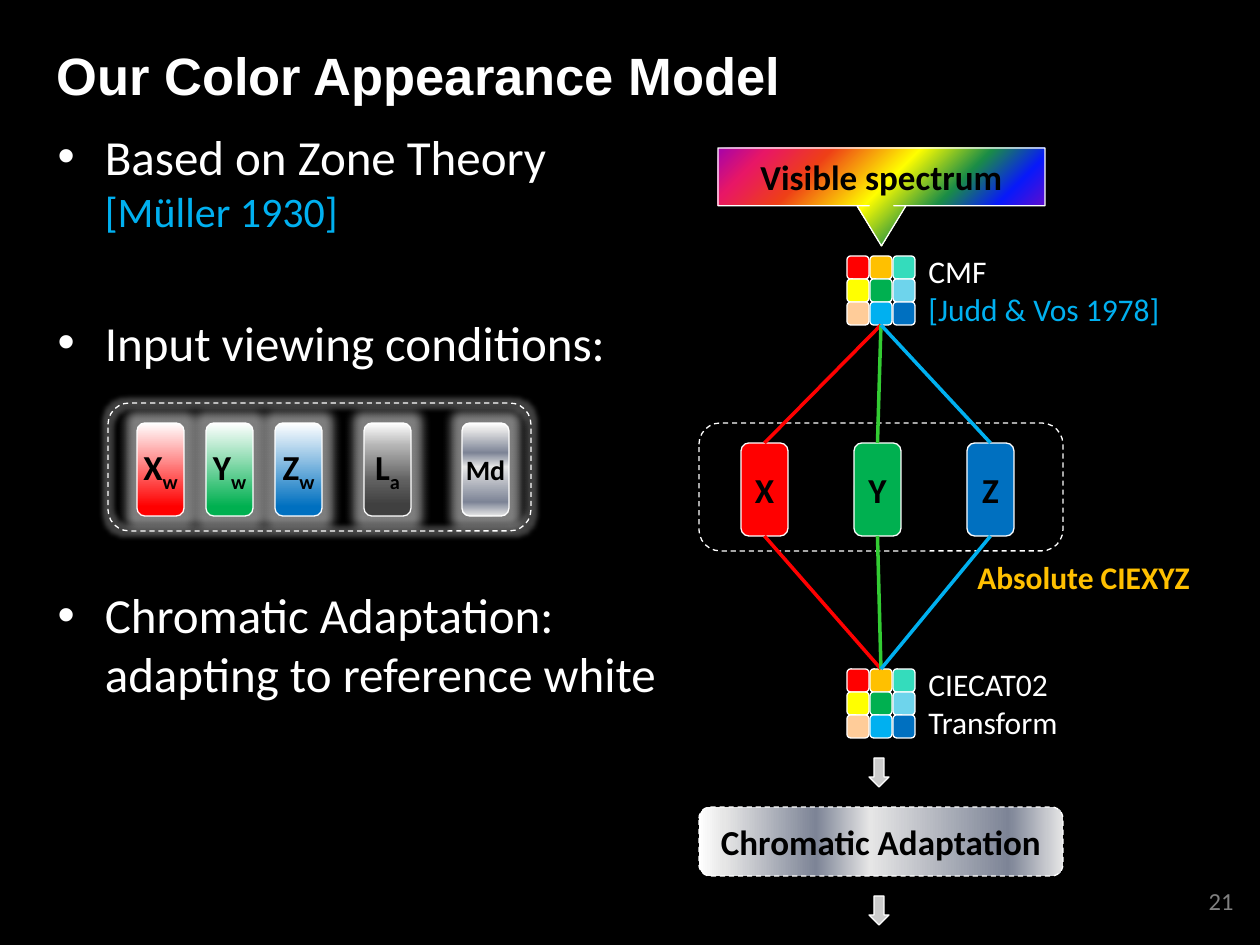
from pptx import Presentation
from pptx.dml.color import RGBColor
from pptx.enum.dml import MSO_LINE
from pptx.enum.shapes import MSO_CONNECTOR, MSO_SHAPE
from pptx.enum.text import MSO_ANCHOR as ANCHOR, MSO_AUTO_SIZE, PP_ALIGN as ALIGN
from pptx.oxml import parse_xml
from pptx.oxml.ns import nsdecls, qn
from pptx.util import Pt

BLACK = RGBColor(0x00, 0x00, 0x00)
WHITE = RGBColor(0xFF, 0xFF, 0xFF)
GRAY = RGBColor(0x80, 0x80, 0x80)
SILVER = RGBColor(0xCC, 0xCC, 0xCC)
RED = RGBColor(0xFF, 0x00, 0x00)
GOLD = RGBColor(0xFF, 0xC0, 0x00)
TEAL = RGBColor(0x34, 0xDC, 0xBC)
YELLOW = RGBColor(0xFF, 0xFF, 0x00)
GREEN = RGBColor(0x00, 0xB0, 0x50)
LIME = RGBColor(0x33, 0xCC, 0x33)
PALE_BLUE = RGBColor(0x6E, 0xD4, 0xEC)
PEACH = RGBColor(0xFF, 0xCC, 0x99)
SKY = RGBColor(0x00, 0xB0, 0xF0)
BLUE = RGBColor(0x00, 0x70, 0xC0)
STEEL = RGBColor(0x7D, 0x84, 0x96)
MIST = RGBColor(0xE6, 0xE6, 0xE6)
ASH = RGBColor(0xB3, 0xB3, 0xB3)
SLATE = RGBColor(0x60, 0x60, 0x60)
CHARCOAL = RGBColor(0x40, 0x40, 0x40)
PURPLE = RGBColor(0xA6, 0x03, 0xAB)
ULTRAMARINE = RGBColor(0x08, 0x19, 0xFB)
FOREST = RGBColor(0x1A, 0x8D, 0x48)
ORANGE = RGBColor(0xEE, 0x3F, 0x17)
MAGENTA = RGBColor(0xE8, 0x17, 0x66)

MATRIX = [[RED, GOLD, TEAL], [YELLOW, GREEN, PALE_BLUE], [PEACH, SKY, BLUE]]
METAL = [(0, WHITE), (7, MIST), (32, STEEL), (47, MIST), (85, STEEL), (100, MIST)]
DARK = [(0, WHITE), (25, ASH), (62, SLATE), (88, CHARCOAL)]
SPECTRUM = [(0, PURPLE), (21, ULTRAMARINE), (35, FOREST), (52, YELLOW),
            (73, ORANGE), (88, MAGENTA), (100, PURPLE)]
DOWNWARD = '<a:lin ang="5400000" scaled="0"/>'
RIGHTWARD = '<a:lin ang="0" scaled="0"/>'
RADIAL = '<a:path path="circle"><a:fillToRect l="100000" t="100000"/></a:path>'


def px(length):
    """Turn px into EMU."""
    return round(length * 914400 / 126)


class SlideBuilder:
    """Hold the style and the current slide."""

    font = "Calibri"

    def __init__(self, presentation):
        self.slide = presentation.slides.add_slide(presentation.slide_layouts[1])
        self.slide.background.fill.solid()
        self.slide.background.fill.fore_color.rgb = BLACK

    def style(self, runs, size, color, bold=False, font=None):
        """Format runs of text."""
        for run in runs:
            run.font.name = font or self.font
            run.font.size = Pt(size)
            run.font.bold = bold
            run.font.color.rgb = color

    def place(self, shape, x, y, width, height):
        """Move and size a shape."""
        shape.left, shape.top, shape.width, shape.height = map(px, (x, y, width, height))

    def title(self, text, *box):
        """Fill the title placeholder."""
        shape = self.slide.shapes.title
        self.place(shape, *box)
        frame = shape.text_frame
        frame.text = text
        frame.auto_size = MSO_AUTO_SIZE.NONE
        frame.vertical_anchor = ANCHOR.TOP
        frame.margin_top = px(11)
        frame.paragraphs[0].alignment = ALIGN.LEFT
        self.style(frame.paragraphs[0].runs, 30, WHITE, True, "Arial")

    def bullets(self, items, *box):
        """Fill the body placeholder with (text, space before) items."""
        shape = self.slide.placeholders[1]
        self.place(shape, *box)
        frame = shape.text_frame
        frame.text = "\n".join(text for text, _ in items)
        frame.auto_size = MSO_AUTO_SIZE.NONE
        for paragraph, (_, space) in zip(frame.paragraphs, items):
            paragraph.space_before = Pt(space)
            self.style(paragraph.runs, 28, WHITE)
        self.style(frame.paragraphs[0].runs[1:], 24, SKY)

    def label(self, text, *box, size=18, colors=(WHITE,), bold=False, align=ALIGN.LEFT):
        """Add a text box with one color per paragraph."""
        frame = self.slide.shapes.add_textbox(*map(px, box)).text_frame
        frame.text = text
        frame.word_wrap = True
        for paragraph, color in zip(frame.paragraphs, colors):
            paragraph.alignment = align
            self.style(paragraph.runs, size, color, bold)

    def shape(self, kind, *box, fill=None, dashed=False):
        """Add a preset shape with a thin white outline."""
        shape = self.slide.shapes.add_shape(kind, *map(px, box))
        shape.shadow.inherit = False
        shape.line.color.rgb = WHITE
        shape.line.width = Pt(0.75)
        if dashed:
            shape.line.dash_style = MSO_LINE.DASH
        if fill is None:
            shape.fill.background()
        else:
            shape.fill.solid()
            shape.fill.fore_color.rgb = fill
        return shape

    def gradient(self, shape, stops, direction):
        """Replace an empty fill by a gradient."""
        marks = "".join(f'<a:gs pos="{position * 1000}"><a:srgbClr val="{color}"/></a:gs>'
                        for position, color in stops)
        properties = shape._element.spPr
        properties.replace(properties.find(qn("a:noFill")), parse_xml(
            f'<a:gradFill {nsdecls("a")} rotWithShape="1"><a:gsLst>{marks}</a:gsLst>'
            f'{direction}</a:gradFill>'))

    def glow(self, shape, radius, opacity):
        """Add a white glow."""
        shape._element.spPr.find(qn("a:effectLst")).append(parse_xml(
            f'<a:glow {nsdecls("a")} rad="{px(radius)}"><a:srgbClr val="FFFFFF">'
            f'<a:alpha val="{opacity * 1000}"/></a:srgbClr></a:glow>'))

    def caption(self, shape, text, subscript="", size=20, margin=0):
        """Write bold centred text in a shape."""
        frame = shape.text_frame
        frame.text = text
        frame.margin_left = frame.margin_right = px(margin)
        frame.vertical_anchor = ANCHOR.MIDDLE
        paragraph = frame.paragraphs[0]
        paragraph.alignment = ALIGN.CENTER
        if subscript:
            run = paragraph.add_run()
            run.text = subscript
            run._r.get_or_add_rPr().set("baseline", "-25000")
        self.style(paragraph.runs, size, BLACK, True)

    def matrix(self, x, y):
        """Add a grid of colored cells and return its rows."""
        return [[self.shape(MSO_SHAPE.ROUNDED_RECTANGLE, x + 23 * column, y + 23 * row,
                            22, 23, fill=color)
                 for column, color in enumerate(colors)]
                for row, colors in enumerate(MATRIX)]

    def connect(self, upper, lower, color):
        """Join the bottom of one shape to the top of another."""
        line = self.slide.shapes.add_connector(MSO_CONNECTOR.STRAIGHT, 0, 0, 0, 0)
        line.begin_connect(upper, 2)
        line.end_connect(lower, 0)
        line.line.color.rgb = color
        line.line.width = Pt(2)
        line._element.spPr.append(parse_xml(f'<a:effectLst {nsdecls("a")}/>'))


def main():
    """Build the slide."""
    presentation = Presentation()
    presentation.slide_width, presentation.slide_height = px(1260), px(945)
    builder = SlideBuilder(presentation)
    rounded = MSO_SHAPE.ROUNDED_RECTANGLE

    builder.title("Our Color Appearance Model", 44, 32, 1021, 69)
    builder.bullets([("Based on Zone Theory\v[Müller 1930]", 0),
                     ("Input viewing conditions:", 44),
                     ("Chromatic Adaptation:\vadapting to reference white", 122)],
                    45, 120, 654, 804)
    builder.label("21", 1182, 880, 64, 65, size=14, colors=[GRAY], align=ALIGN.RIGHT)

    spectrum = builder.shape(MSO_SHAPE.DOWN_ARROW_CALLOUT, 718, 148, 327, 98)
    for index, value in enumerate((0.25, 0.25, 0.41, 0.65)):
        spectrum.adjustments[index] = value
    builder.gradient(spectrum, SPECTRUM, RADIAL)
    builder.caption(spectrum, "Visible spectrum", margin=12)

    builder.shape(rounded, 699, 423, 364, 128, dashed=True)
    channels = []
    for index, (name, color) in enumerate((("X", RED), ("Y", GREEN), ("Z", BLUE))):
        channel = builder.shape(rounded, 741 + 113 * index, 443, 47, 93, fill=color)
        builder.caption(channel, name)
        channels.append(channel)
    builder.label("Absolute CIEXYZ", 965, 552, 276, 50, colors=[GOLD], bold=True)

    matching = builder.matrix(847, 256)
    builder.label("CMF\n[Judd & Vos 1978]", 916, 246, 260, 89, colors=[WHITE, SKY])
    transform = builder.matrix(847, 669)
    builder.label("CIECAT02\vTransform", 916, 659, 156, 89)

    adaptation = builder.shape(rounded, 699, 807, 364, 69, dashed=True)
    builder.gradient(adaptation, METAL, RIGHTWARD)
    builder.caption(adaptation, "Chromatic Adaptation", margin=12)
    for top in (758, 896):
        builder.shape(MSO_SHAPE.DOWN_ARROW, 869, top, 20, 29, fill=SILVER)

    for channel, color in zip(channels, (RED, LIME, SKY)):
        builder.connect(matching[2][1], channel, color)
        builder.connect(channel, transform[0][1], color)

    conditions = [(364, "L", "a", 20, DARK), (462, "Md", "", 16, METAL)]
    for index, (name, color) in enumerate((("X", RED), ("Y", GREEN), ("Z", BLUE))):
        conditions.append((137 + 69 * index, name, "w", 20, [(0, WHITE), (90, color)]))
    for left, name, subscript, size, stops in conditions:
        condition = builder.shape(rounded, left, 423, 47, 93)
        builder.gradient(condition, stops, DOWNWARD)
        builder.glow(condition, 20, 50)
        builder.caption(condition, name, subscript, size)
    frame = builder.shape(rounded, 108, 403, 423, 128, dashed=True)
    builder.glow(frame, 10, 25)

    presentation.save("out.pptx")


if __name__ == "__main__":
    main()
